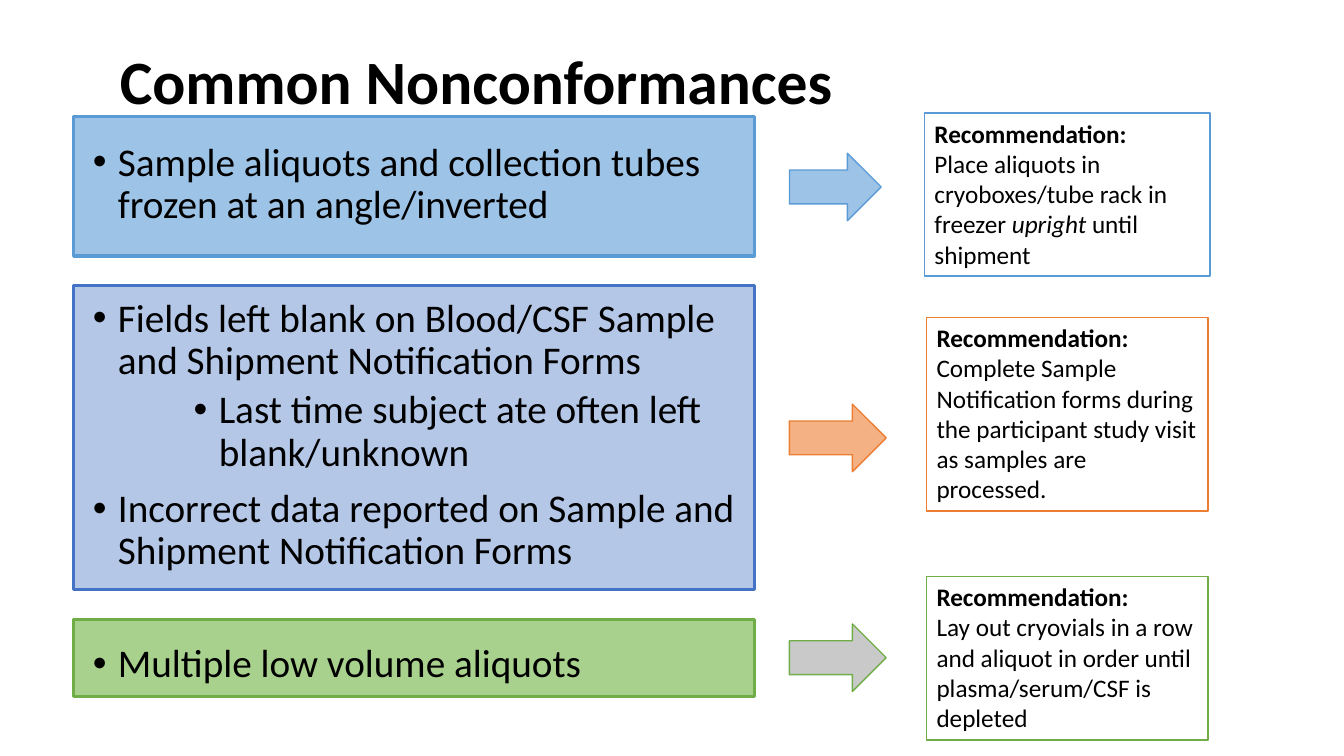
from dataclasses import dataclass

from lxml import etree
from pptx import Presentation
from pptx.dml.color import RGBColor
from pptx.enum.shapes import MSO_SHAPE
from pptx.enum.text import MSO_ANCHOR, PP_ALIGN
from pptx.oxml.ns import qn
from pptx.util import Inches, Pt


@dataclass(frozen=True)
class Theme:
    font: str = "Calibri"
    text: str = "000000"
    white: str = "FFFFFF"
    blue: str = "5B9BD5"
    light_blue: str = "9DC3E6"
    indigo: str = "4472C4"
    light_indigo: str = "B4C7E7"
    orange: str = "ED7D31"
    light_orange: str = "F4B183"
    green: str = "70AD47"
    light_green: str = "A9D18E"
    gray: str = "C9C9C9"
    title_size: int = 44
    body_size: int = 28
    note_size: int = 18
    panel_line: float = 2.25
    thin_line: float = 1


class SlideBuilder:
    def __init__(self, slide, theme):
        self.s = slide
        self.theme = theme

    def add_run(self, p, text, size, bold=False, italic=False):
        r = p.add_run()
        r.text = text
        r.font.name = self.theme.font
        r.font.size = Pt(size)
        r.font.bold = bold
        r.font.italic = italic
        r.font.color.rgb = RGBColor.from_string(self.theme.text)

    def shape(self, kind, box, fill, line, width):
        sp = self.s.shapes.add_shape(kind, *map(Inches, box))
        sp.shadow.inherit = False
        sp.fill.solid()
        sp.fill.fore_color.rgb = RGBColor.from_string(fill)
        sp.line.color.rgb = RGBColor.from_string(line)
        sp.line.width = Pt(width)
        return sp

    def title(self, text, box):
        tf = self.s.shapes.add_textbox(*map(Inches, box)).text_frame
        tf.word_wrap = True
        tf.vertical_anchor = MSO_ANCHOR.MIDDLE
        p = tf.paragraphs[0]
        p.line_spacing = 0.9
        self.add_run(p, text, self.theme.title_size, bold=True)

    def bullet(self, p, text, level):
        p.level = level
        p.alignment = PP_ALIGN.LEFT
        p.line_spacing = 0.9
        pPr = p._p.get_or_add_pPr()
        pPr.set("marL", str(Inches(0.25 + 0.5 * level)))
        pPr.set("indent", str(Inches(-0.25)))
        etree.SubElement(pPr, qn("a:buFont")).set("typeface", "Arial")
        etree.SubElement(pPr, qn("a:buChar")).set("char", "•")
        self.add_run(p, text, self.theme.body_size)

    def panel(self, box, fill, line, top_inset, bullets):
        sp = self.shape(MSO_SHAPE.RECTANGLE, box, fill, line, self.theme.panel_line)
        tf = sp.text_frame
        tf.word_wrap = True
        tf.vertical_anchor = MSO_ANCHOR.TOP
        tf.margin_left, tf.margin_right = Inches(0.19), Inches(0.09)
        tf.margin_top, tf.margin_bottom = Inches(top_inset), 0
        for i, (text, level) in enumerate(bullets):
            p = tf.add_paragraph() if i else tf.paragraphs[0]
            if i:
                p.space_before = Pt(5 if level else 10)
            self.bullet(p, text, level)

    def arrow(self, box, fill, line):
        self.shape(MSO_SHAPE.RIGHT_ARROW, box, fill, line, self.theme.thin_line)

    def note(self, box, line, paragraphs):
        sp = self.shape(MSO_SHAPE.RECTANGLE, box, self.theme.white, line,
                        self.theme.thin_line)
        tf = sp.text_frame
        tf.word_wrap = True
        tf.vertical_anchor = MSO_ANCHOR.TOP
        for i, runs in enumerate(paragraphs):
            p = tf.add_paragraph() if i else tf.paragraphs[0]
            p.alignment = PP_ALIGN.LEFT
            for text, style in runs:
                self.add_run(p, text, self.theme.note_size,
                             style == "bold", style == "italic")


def main():
    prs = Presentation()
    prs.slide_width, prs.slide_height = Inches(13.33), Inches(7.5)
    th = Theme()
    b = SlideBuilder(prs.slides.add_slide(prs.slide_layouts[6]), th)

    # Nonconformance panels: top, height, fill, line, top inset, bullets
    panels = [
        (1.16, 1.38, th.light_blue, th.blue, 0.25, [
            ("Sample aliquots and collection tubes frozen at an angle/inverted", 0)]),
        (2.83, 3.02, th.light_indigo, th.indigo, 0.13, [
            ("Fields left blank on Blood/CSF Sample and Shipment Notification Forms", 0),
            ("Last time subject ate often left blank/unknown", 2),
            ("Incorrect data reported on Sample and Shipment Notification Forms", 0)]),
        (6.15, 0.76, th.light_green, th.green, 0.24, [
            ("Multiple low volume aliquots", 0)]),
    ]
    for top, height, fill, line, inset, bullets in panels:
        b.panel((0.73, top, 6.75, height), fill, line, inset, bullets)

    # Recommendation boxes
    heading = ("Recommendation:", "bold")
    notes = [
        ((9.17, 1.12, 2.83, 1.62), th.blue, [
            [heading],
            [("Place aliquots in cryoboxes/tube rack in freezer ", ""),
             ("upright", "italic"), (" until shipment", "")]]),
        ((9.19, 3.15, 2.79, 1.92), th.orange, [
            [("Recommendation: ", "bold"),
             ("Complete Sample Notification forms during the participant "
              "study visit as samples are processed.", "")]]),
        ((9.19, 5.72, 2.79, 1.62), th.green, [
            [heading],
            [("Lay out cryovials in a row and aliquot in order until "
              "plasma/serum/CSF is depleted", "")]]),
    ]
    for box, line, paragraphs in notes:
        b.note(box, line, paragraphs)

    # Arrows from panels to recommendations
    for top, width, fill, line in [
        (1.52, 0.91, th.light_blue, th.blue),
        (4.01, 0.96, th.light_orange, th.orange),
        (6.19, 0.96, th.gray, th.green),
    ]:
        b.arrow((7.83, top, width, 0.67), fill, line)

    # Title
    b.title("Common Nonconformances", (1.09, 0.11, 11.5, 1.45))

    prs.save("out.pptx")


if __name__ == "__main__":
    main()
